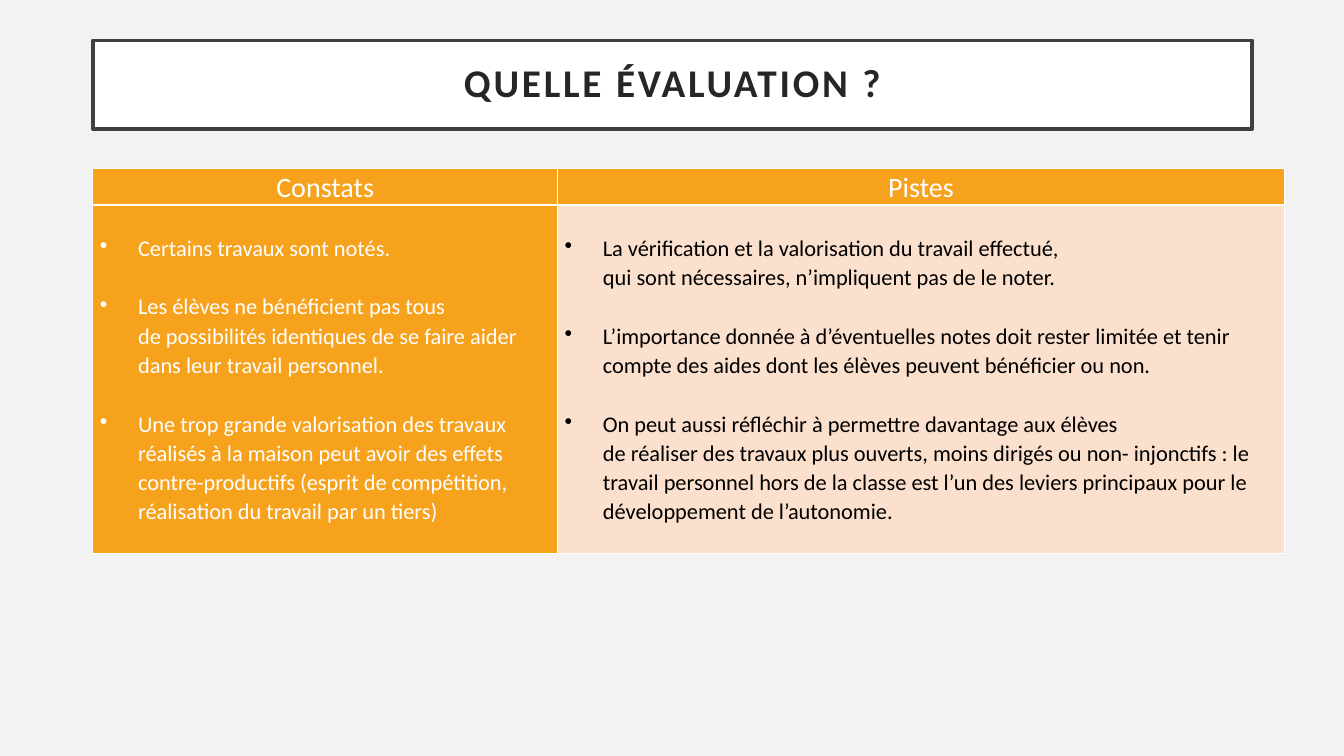
from lxml import etree
from pptx import Presentation
from pptx.dml.color import RGBColor
from pptx.enum.text import MSO_ANCHOR, MSO_AUTO_SIZE, PP_ALIGN
from pptx.oxml.ns import qn
from pptx.util import Inches, Pt

CENTER, LEFT = PP_ALIGN.CENTER, PP_ALIGN.LEFT
MIDDLE, TOP = MSO_ANCHOR.MIDDLE, MSO_ANCHOR.TOP
NO_AUTOFIT = MSO_AUTO_SIZE.NONE

WHITE = RGBColor(0xFF, 0xFF, 0xFF)
BLACK = RGBColor(0x00, 0x00, 0x00)
PAGE_GREY = RGBColor(0xF2, 0xF2, 0xF2)
FRAME_GREY = RGBColor(0x40, 0x40, 0x40)
TITLE_GREY = RGBColor(0x26, 0x26, 0x26)
ORANGE = RGBColor(0xF6, 0xA2, 0x1D)
PEACH = RGBColor(0xFB, 0xE0, 0xCD)

FONT = "Calibri"
LEFT_MARGIN = Inches(0.92)
COLUMN_WIDTHS = (Inches(4.61), Inches(7.21))
ROW_HEIGHTS = (Inches(0.36), Inches(3.46))
HANGING_INDENT = Inches(0.38)

TITLE = "QUELLE ÉVALUATION ?"
HEADINGS = ("Constats", "Pistes")
FINDINGS = (
    "Certains travaux sont notés.",
    "Les élèves ne bénéficient pas tous \n"
    "de possibilités identiques de se faire aider dans leur travail personnel.",
    "Une trop grande valorisation des travaux réalisés à la maison peut avoir des effets "
    "contre-productifs (esprit de compétition, réalisation du travail par un tiers)",
)
IDEAS = (
    "La vérification et la valorisation du travail effectué, \n"
    "qui sont nécessaires, n’impliquent pas de le noter.",
    "L’importance donnée à d’éventuelles notes doit rester limitée et tenir compte des aides "
    "dont les élèves peuvent bénéficier ou non.",
    "On peut aussi réfléchir à permettre davantage aux élèves \n"
    "de réaliser des travaux plus ouverts, moins dirigés ou non- injonctifs : le travail "
    "personnel hors de la classe est l’un des leviers principaux pour le développement "
    "de l’autonomie.",
)


def format_paragraph(paragraph, size, color, align, spacing, bold=False):
    paragraph.alignment = align
    paragraph.line_spacing = spacing
    font = paragraph.font
    font.name, font.size, font.bold = FONT, Pt(size), bold
    font.color.rgb = color


def add_bullet(paragraph):
    properties = paragraph._p.get_or_add_pPr()
    properties.set("marL", str(HANGING_INDENT))
    properties.set("indent", str(-HANGING_INDENT))
    bullet = etree.Element(qn("a:buChar"), char="•")
    # The schema puts the bullet before the default run properties.
    properties.find(qn("a:defRPr")).addprevious(bullet)


def add_borders(cell):
    """Draw a thin white line on each side of the cell."""
    properties = cell._tc.get_or_add_tcPr()
    for position, side in enumerate(("lnL", "lnR", "lnT", "lnB")):
        line = etree.Element(qn(f"a:{side}"), w=str(Pt(1)))
        fill = etree.SubElement(line, qn("a:solidFill"))
        etree.SubElement(fill, qn("a:srgbClr"), val=str(WHITE))
        properties.insert(position, line)


def format_cell(cell, fill, anchor):
    cell.fill.solid()
    cell.fill.fore_color.rgb = fill
    cell.vertical_anchor = anchor
    cell.margin_left = cell.margin_right = Inches(0.07)
    cell.margin_top = cell.margin_bottom = 0
    add_borders(cell)


def fill_heading(cell, heading):
    format_cell(cell, ORANGE, TOP)
    paragraph = cell.text_frame.paragraphs[0]
    paragraph.text = heading
    format_paragraph(paragraph, 20, WHITE, CENTER, 1.07)


def fill_list(cell, items, fill, color):
    format_cell(cell, fill, MIDDLE)
    frame = cell.text_frame
    for index, item in enumerate(items):
        paragraph = frame.add_paragraph() if index else frame.paragraphs[0]
        paragraph.text = item
        format_paragraph(paragraph, 16, color, LEFT, 1.07)
        if index:
            paragraph.space_before = Pt(21)
        add_bullet(paragraph)


def format_title(title):
    title.left, title.top = LEFT_MARGIN, Inches(0.4)
    title.width, title.height = Inches(11.5), Inches(0.88)
    title.fill.solid()
    title.fill.fore_color.rgb = WHITE
    title.line.color.rgb = FRAME_GREY
    title.line.width = Pt(2.5)
    frame = title.text_frame
    frame.auto_size = NO_AUTOFIT
    frame.vertical_anchor = MIDDLE
    paragraph = frame.paragraphs[0]
    paragraph.text = TITLE
    format_paragraph(paragraph, 28, TITLE_GREY, CENTER, 0.9, bold=True)
    paragraph.runs[0].font._element.set("spc", "200")


def add_comparison_table(slide):
    table = slide.shapes.add_table(
        len(ROW_HEIGHTS), len(COLUMN_WIDTHS), LEFT_MARGIN, Inches(1.67),
        sum(COLUMN_WIDTHS), sum(ROW_HEIGHTS)).table
    for column, width in zip(table.columns, COLUMN_WIDTHS):
        column.width = width
    for row, height in zip(table.rows, ROW_HEIGHTS):
        row.height = height
    for index, heading in enumerate(HEADINGS):
        fill_heading(table.cell(0, index), heading)
    fill_list(table.cell(1, 0), FINDINGS, ORANGE, WHITE)
    fill_list(table.cell(1, 1), IDEAS, PEACH, BLACK)


def main():
    presentation = Presentation()
    presentation.slide_width, presentation.slide_height = Inches(13.33), Inches(7.5)
    title_only = presentation.slide_layouts.get_by_name("Title Only")
    slide = presentation.slides.add_slide(title_only)
    slide.background.fill.solid()
    slide.background.fill.fore_color.rgb = PAGE_GREY
    format_title(slide.shapes.title)
    add_comparison_table(slide)
    presentation.save("out.pptx")


if __name__ == "__main__":
    main()
